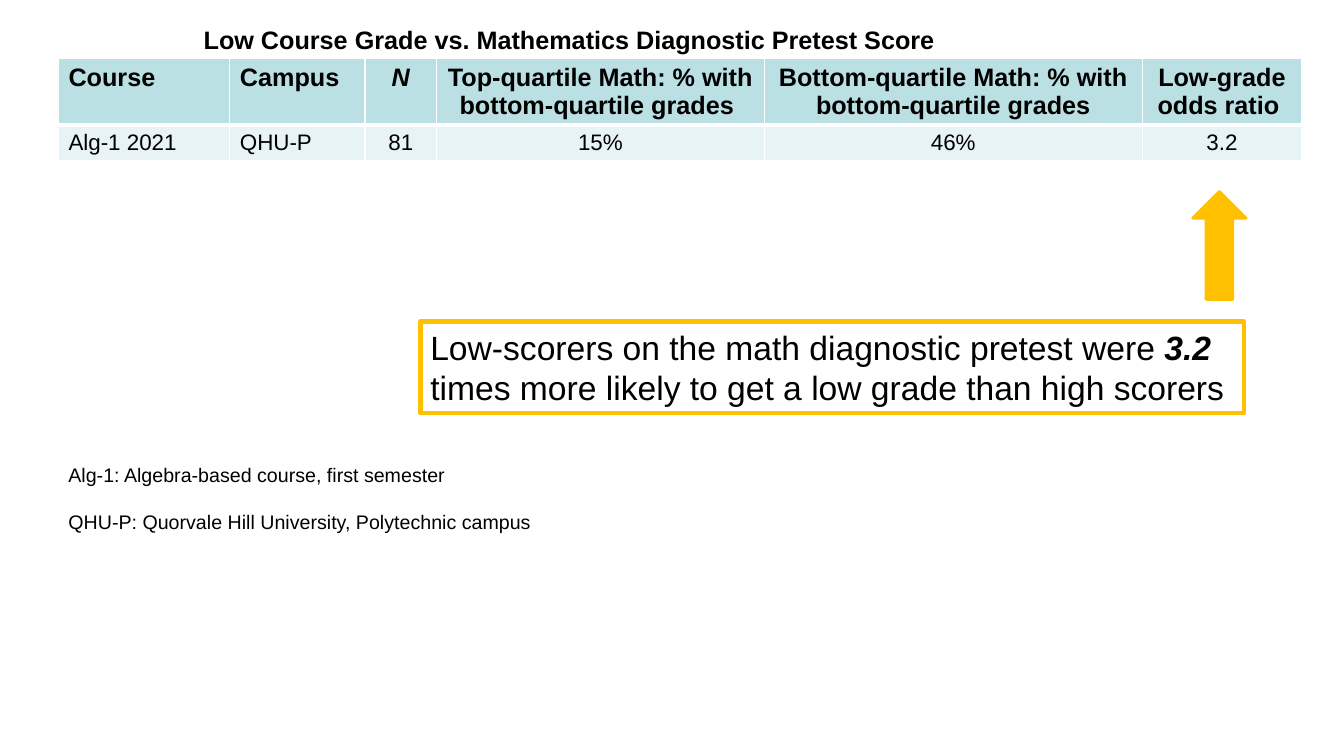
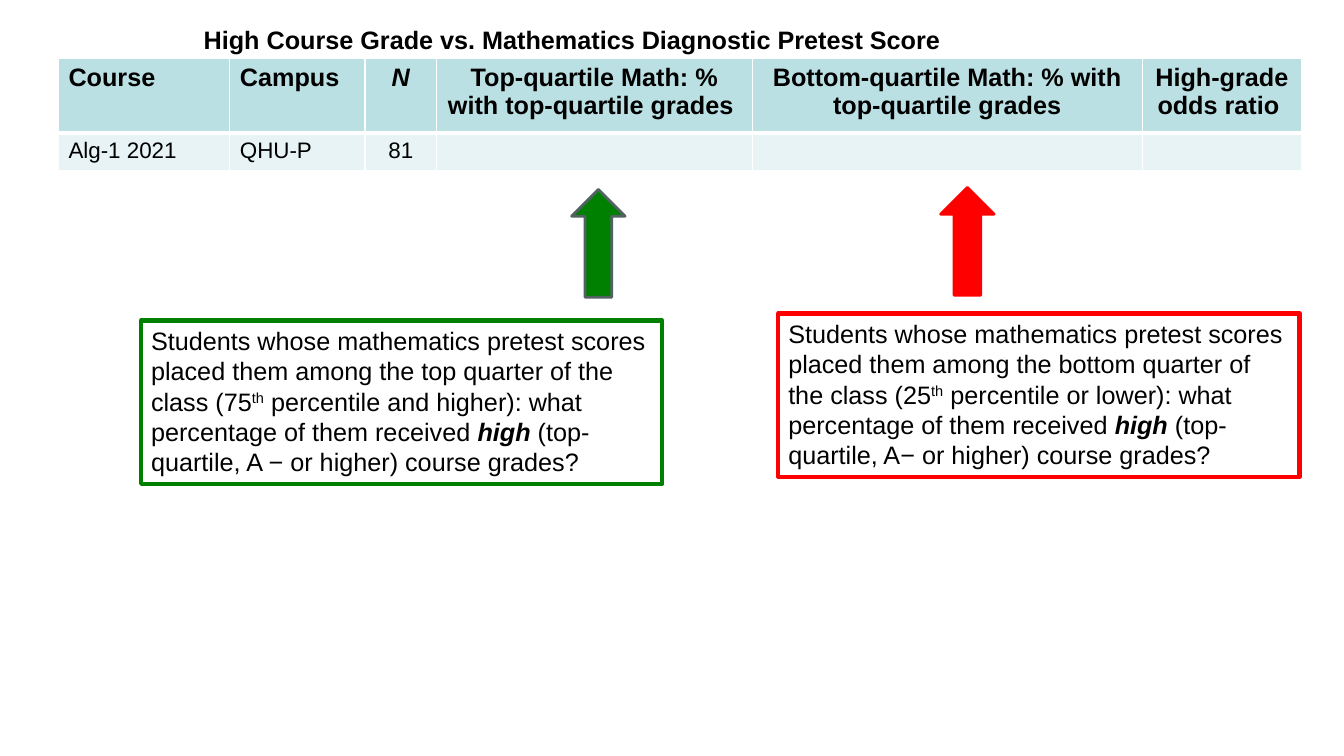
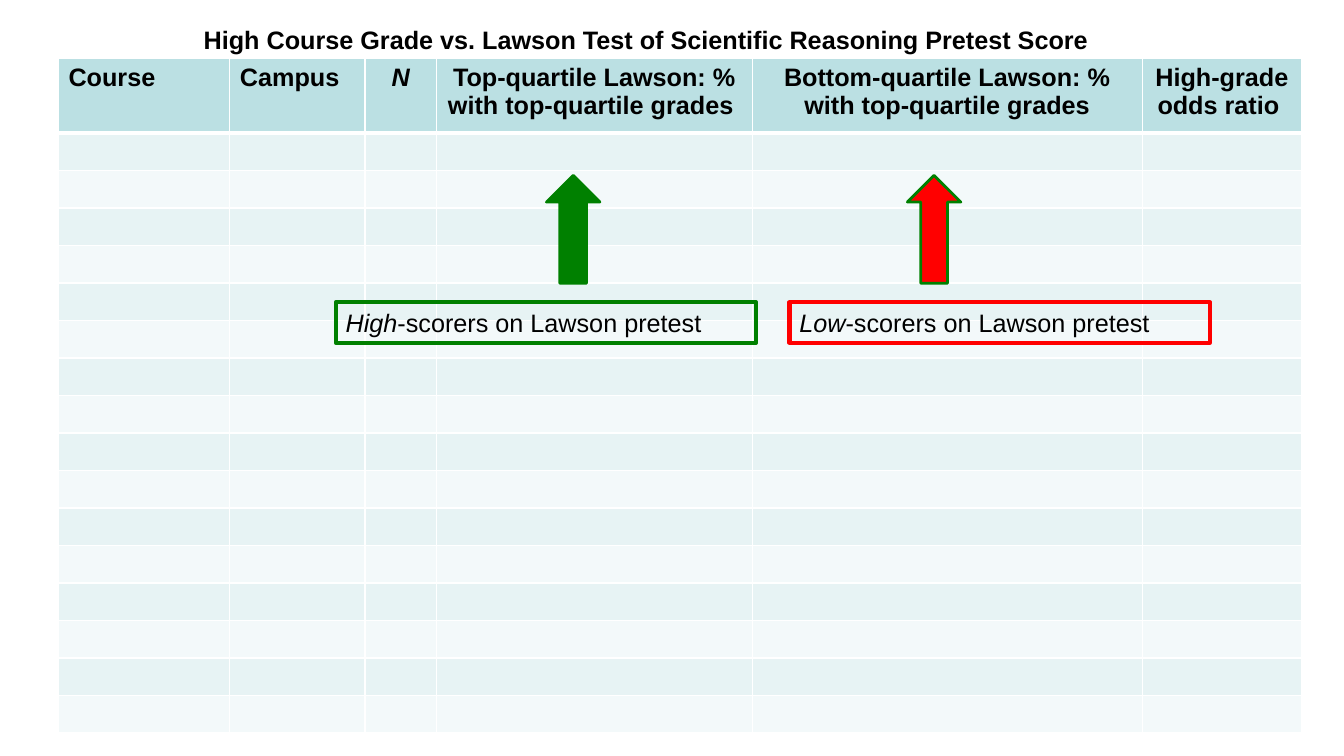
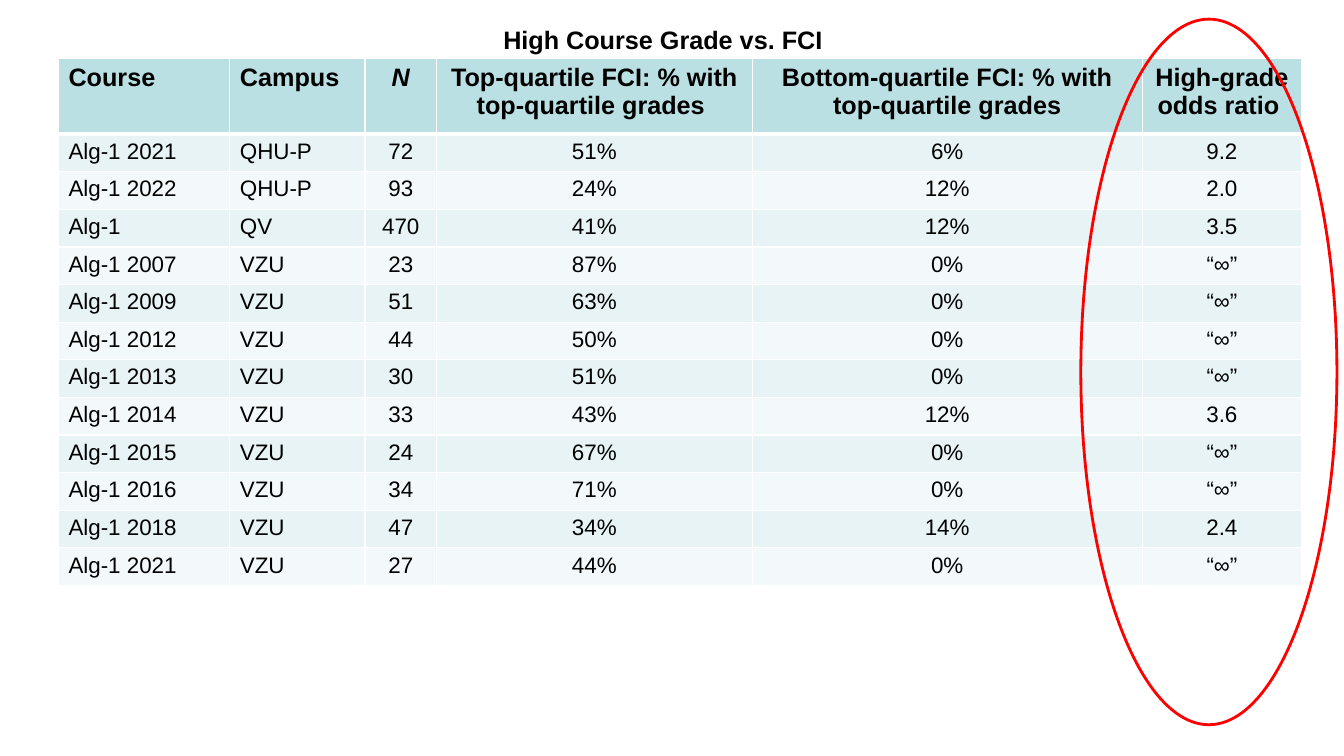
import pptx
import pptx.util
import pptx.dml.color
import pptx.enum.shapes
import pptx.enum.text
import pptx.oxml
import pptx.oxml.ns

Inches = pptx.util.Inches
Pt = pptx.util.Pt
Align = pptx.enum.text.PP_ALIGN
Shape = pptx.enum.shapes.MSO_SHAPE

COLORS = {
    "black": "000000", "white": "FFFFFF", "head": "BBE0E3",
    "band": "E7F3F4", "pale": "F3F9FA", "gold": "FFC000",
    "green": "008000", "red": "FF0000", "slate": "526263",
}
FONT = "Arial"
LEFT, TOP = 0.58, 0.58
EMPTY = [""] * 6


def color(name):
    return pptx.dml.color.RGBColor.from_string(COLORS[name])


def write(para, text, size=18, bold=False, italic=False, align=None, base=0):
    """Add one run to a paragraph; empty text only sets the line's size."""
    if align is not None:
        para.alignment = align
    if not text:
        para._p.get_or_add_endParaRPr().set("sz", str(size * 100))
        return
    run = para.add_run()
    run.text = text
    font = run.font
    font.name, font.size = FONT, Pt(size)
    font.bold, font.italic = bold, italic
    font.color.rgb = color("black")
    if base:
        font._element.set("baseline", str(base * 1000))


def border(cell, **widths):
    """Draw white cell borders with a width in points per side."""
    props = cell._tc.get_or_add_tcPr()
    for side in "LRTB":
        props.append(pptx.oxml.parse_xml(
            f'<a:ln{side} {pptx.oxml.ns.nsdecls("a")} w="{Pt(widths.get(side, 1))}">'
            f'<a:solidFill><a:srgbClr val="{COLORS["white"]}"/></a:solidFill>'
            f'</a:ln{side}>'))


class Deck:
    def __init__(self):
        self.prs = pptx.Presentation()
        self.prs.slide_width = Inches(13.33)
        self.prs.slide_height = Inches(7.5)
        self.slide = None

    def start(self, title, align=Align.LEFT):
        self.slide = self.prs.slides.add_slide(self.prs.slide_layouts[5])
        head = self.slide.shapes.title
        head.left, head.top = Inches(1.92), Inches(0.19)
        head.width, head.height = Inches(9.31), Inches(0.4)
        frame = head.text_frame
        frame.word_wrap = True
        frame.auto_size = pptx.enum.text.MSO_AUTO_SIZE.NONE
        frame.vertical_anchor = pptx.enum.text.MSO_ANCHOR.TOP
        write(frame.paragraphs[0], title, bold=True, align=align)

    def table(self, test, grade, rows, total, top=3.13, tall=0.74):
        """total and tall are the table and header heights, top a column width."""
        share = f"% with {'top' if grade == 'High' else 'bottom'}-quartile grades"
        heads = ["Course", "Campus", "N", f"Top-quartile {test}: {share} ",
                 f"Bottom-quartile {test}: {share}", f"{grade}-grade odds ratio "]
        widths = [1.7, 1.34, 0.71, top, 7 - top, 1.58]
        high = (total - tall) / len(rows)
        data = [heads] + rows
        grid = self.slide.shapes.add_table(
            len(data), len(heads), Inches(LEFT), Inches(TOP),
            Inches(sum(widths)), Inches(total)).table
        for col, width in zip(grid.columns, widths):
            col.width = Inches(width)
        for r, row in enumerate(data):
            grid.rows[r].height = Inches(high if r else tall)
            for c, text in enumerate(row):
                cell = grid.cell(r, c)
                border(cell, T=3 if r == 1 else 1, B=1 if r else 3)
                cell.fill.solid()
                shade = "head" if r == 0 else "band" if r % 2 else "pale"
                cell.fill.fore_color.rgb = color(shade)
                write(cell.text_frame.paragraphs[0], text, size=16 if r else 18,
                      bold=r == 0, italic=r == 0 and c == 2,
                      align=Align.CENTER if c > 1 else Align.LEFT)

    def text(self, x, y, w, h, paras, size=18, line=None, gap=0):
        """Each paragraph is a list of (text, format) runs."""
        box = self.slide.shapes.add_textbox(Inches(x), Inches(y), Inches(w), Inches(h))
        if line:
            box.line.color.rgb = color(line)
            box.line.width = Pt(3)
        frame = box.text_frame
        frame.word_wrap = True
        for i, runs in enumerate(paras):
            para = frame.add_paragraph() if i else frame.paragraphs[0]
            para.space_before = Pt(gap if i else 0)
            for words, form in runs:
                write(para, words, size=size, **form)

    def shape(self, kind, x, y, w, h, line, fill=None):
        item = self.slide.shapes.add_shape(
            kind, Inches(x), Inches(y), Inches(w), Inches(h))
        item.shadow.inherit = False
        if fill:
            item.fill.solid()
            item.fill.fore_color.rgb = color(fill)
        else:
            item.fill.background()
        item.line.color.rgb = color(line)
        item.line.width = Pt(2)

    def arrow(self, x, y, fill, line=None):
        self.shape(Shape.UP_ARROW, x, y, 0.53, 1.07, line or fill, fill)


def main():
    deck = Deck()
    strong = {"bold": True, "italic": True}

    # Low grades against the mathematics pretest
    deck.start("Low Course Grade vs. Mathematics Diagnostic Pretest Score")
    deck.table("Math", "Low", [["Alg-1 2021", "QHU-P", "81", "15%", "46%", "3.2"]],
               total=1.01, top=3.25, tall=0.66)
    deck.text(LEFT, 4.54, 6.25, 0.8, [
        [("Alg-1: Algebra-based course, first semester", {})],
        [("QHU-P: Quorvale Hill University, Polytechnic campus", {})],
    ], size=14, gap=17)
    deck.text(4.17, 3.19, 8.17, 0.91, [[
        ("Low-scorers on the math diagnostic pretest were ", {}), ("3.2", strong),
        (" times more likely to get a low grade than high scorers", {}),
    ]], size=24, line="gold")
    deck.arrow(11.83, 1.9, "gold")

    # High grades against the mathematics pretest
    deck.start("High Course Grade vs. Mathematics Diagnostic Pretest Score")
    deck.table("Math", "High", [["Alg-1 2021", "QHU-P", "81", "", "", ""]], total=1.1)
    groups = [
        (1.4, 3.18, "green", "top", "75", "and higher", "A −"),
        (7.72, 3.11, "red", "bottom", "25", "or lower", "A−"),
    ]
    for x, y, line, part, rank, bound, mark in groups:
        deck.text(x, y, 5.17, 1.62, [[
            ("Students whose mathematics pretest scores placed them among the "
             f"{part} quarter of the class ({rank}", {}),
            ("th", {"base": 30}),
            (f" percentile {bound}): what percentage of them received ", {}),
            ("high", strong),
            (f" (top-quartile, {mark} or higher) course grades?", {}),
        ]], line=line)
    deck.arrow(5.67, 1.88, "green", "slate")
    deck.arrow(9.33, 1.86, "red")

    # High grades against the reasoning pretest
    deck.start("High Course Grade vs. Lawson Test of Scientific Reasoning Pretest Score")
    deck.table("Lawson", "High", [EMPTY] * 16, total=6.61)
    for x, tip, hue, level in [(3.33, 5.42, "green", "High"), (7.83, 9, "red", "Low")]:
        deck.text(x, 3, 4.17, 0.4, [[
            (level, {"italic": True}), ("-scorers on Lawson pretest", {}),
        ]], line=hue)
        deck.arrow(tip, 1.74, hue, "green")

    # High grades against the FCI, with the odds ratios circled
    deck.start("High Course Grade vs. FCI", align=Align.CENTER)
    deck.table("FCI", "High", [
        ["Alg-1 2021", "QHU-P", "72", "51%", "6%", "9.2"],
        ["Alg-1 2022", "QHU-P", "93", "24%", "12%", "2.0"],
        ["Alg-1", "QV", "470", "41%", "12%", "3.5"],
        ["Alg-1 2007", "VZU", "23", "87%", "0%", "“∞”"],
        ["Alg-1 2009", "VZU", "51", "63%", "0%", "“∞”"],
        ["Alg-1 2012", "VZU", "44", "50%", "0%", "“∞”"],
        ["Alg-1 2013", "VZU", "30", "51%", "0%", "“∞”"],
        ["Alg-1 2014", "VZU", "33", "43%", "12%", "3.6"],
        ["Alg-1 2015", "VZU", "24", "67%", "0%", "“∞”"],
        ["Alg-1 2016", "VZU", "34", "71%", "0%", "“∞”"],
        ["Alg-1 2018", "VZU", "47", "34%", "14%", "2.4"],
        ["Alg-1 2021", "VZU", "27", "44%", "0%", "“∞”"],
    ], total=5.23, tall=0.75)
    deck.shape(Shape.OVAL, 10.72, 0.19, 2.54, 7, "red")

    deck.prs.save("out.pptx")


if __name__ == "__main__":
    main()
